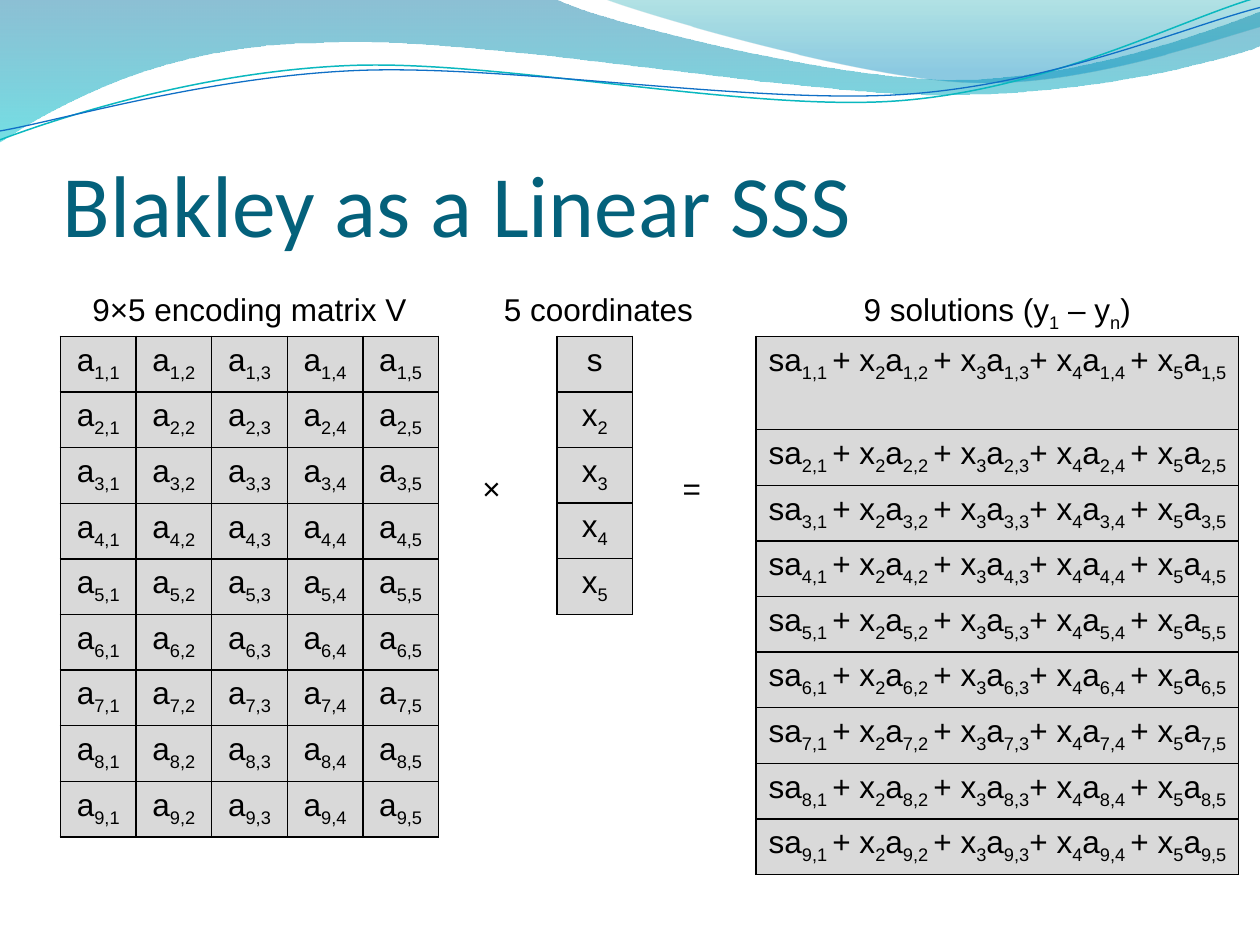
from math import cos, radians, sin

from lxml.etree import SubElement
from pptx import Presentation
from pptx.dml.color import RGBColor
from pptx.enum.text import MSO_ANCHOR, MSO_AUTO_SIZE, PP_ALIGN
from pptx.oxml.ns import qn
from pptx.util import Inches, Pt

rgb = RGBColor.from_string
BLACK, GREY, TEAL = "000000", "D9D9D9", "04617B"


def write(frame, text, align=PP_ALIGN.CENTER, name="Arial", size=18, color=BLACK):
    """Fill a text frame; parts between underscores become subscripts."""
    para = frame.paragraphs[0]
    para.alignment = align
    for i, part in enumerate(text.split("_")):
        if not part:
            continue
        run = para.add_run()
        run.text = part
        for key, value in {"name": name, "size": Pt(size)}.items():
            setattr(run.font, key, value)
        run.font.color.rgb = rgb(color)
        if i % 2:
            run.font._element.set("baseline", "-25000")


def draw(steps, closed, turn=0, center=(0, 0)):
    """Draw a freeform from steps of one point (line) or three (curve)."""
    cx, cy = center
    c, s = cos(radians(turn)), sin(radians(turn))
    # Points are given as seen, so take the shape's own rotation out first.
    points = [(Inches(cx + (x - cx) * c + (y - cy) * s),
               Inches(cy - (x - cx) * s + (y - cy) * c))
              for step in steps for x, y in step]
    pen = shapes.build_freeform(*points[0], scale=1.0)
    pen.add_line_segments(points[1:], close=closed)
    shape = pen.convert_to_shape()
    shape.shadow.inherit = False
    shape.rotation = turn % 360
    outline = next(shape._element.iter(qn("a:path")))
    lines = iter(outline.findall(qn("a:lnTo")))
    for step in steps[1:]:
        first = next(lines)
        if len(step) == 3:
            first.tag = qn("a:cubicBezTo")
            for _ in range(2):
                extra = next(lines)
                first.append(extra[0])
                outline.remove(extra)
    return shape


deck = Presentation()
deck.slide_width, deck.slide_height = Inches(10), Inches(7.5)
slide = deck.slides.add_slide(deck.slide_layouts[6])
shapes = slide.shapes

# Header waves: steps, then (position, colour, opacity) for each stop
waves = [
    ([[(0, -0.01)], [(4.4, -0.01)],
      [(4.76, 0.17), (6.64, 0.63), (7.58, 0.63)],
      [(8.53, 0.63), (9.58, 0.26), (10, 0.09)],
      [(10.01, 0.36)],
      [(9.83, 0.44), (8.7, 0.76), (7.46, 0.75)],
      [(6.22, 0.75), (3.82, 0.28), (2.57, 0.34)],
      [(1.29, 0.35), (0.46, 0.83), (-0.01, 1.13)]],
     [(0, "0074A1", 45), (1, "00C6CF", 55)]),
    ([[(4.79, -0.01)],
      [(5.09, 0.11), (6.82, 0.62), (7.69, 0.65)],
      [(8.56, 0.69), (9.61, 0.32), (10, 0.21)],
      [(10, 0)]],
     [(0, "00A1A9", 30), (0.8, "008BBF", 45)]),
]
for steps, stops in waves:
    wave = draw(steps, True)
    wave.line.fill.background()
    wave.fill.gradient()
    wave.fill.gradient_angle = 270
    for stop, (place, color, _) in zip(wave.fill.gradient_stops, stops):
        stop.position = place
        stop.color.rgb = rgb(color)
    tints = wave._element.spPr.iter(qn("a:srgbClr"))
    for tint, (_, _, alpha) in zip(tints, stops):
        SubElement(tint, qn("a:alpha"), val=str(alpha * 1000))

curves = [
    ([[(0, 1.11)],
      [(0.48, 0.93), (1.58, 0.57), (2.77, 0.52)],
      [(3.95, 0.47), (5.93, 0.89), (7.13, 0.8)],
      [(8.33, 0.71), (9.38, 0.15), (9.98, -0.02)]],
     (4.99, 0.57), "0AB8BF", 0.85),
    ([[(0, 1.04)],
      [(0.47, 0.96), (1.64, 0.61), (2.83, 0.56)],
      [(4.03, 0.51), (5.97, 0.83), (7.17, 0.75)],
      [(8.36, 0.67), (9.41, 0.21), (10, 0.06)]],
     (5, 0.59), "0F6FC6", 0.75),
]
for steps, center, color, width in curves:
    curve = draw(steps, False, -2.7, center)
    curve.fill.background()
    curve.line.color.rgb = rgb(color)
    curve.line.width = Pt(width)

# Title
title = shapes.add_textbox(Inches(0.5), Inches(0.77), Inches(9), Inches(1.25))
style = {"word_wrap": True, "vertical_anchor": MSO_ANCHOR.BOTTOM,
         "margin_left": 0, "margin_top": Inches(0.05),
         "margin_right": 0, "margin_bottom": 0}
for key, value in style.items():
    setattr(title.text_frame, key, value)
write(title.text_frame, "Blakley as a Linear SSS", PP_ALIGN.LEFT, "Calibri", 50, TEAL)

# Matrix, coordinates and solutions: left, column width, first row, alignment, cells
rows = range(1, 10)
matrix = [[f"a_{r},{c}_" for c in range(1, 6)] for r in rows]
coords = [["s"]] + [[f"x_{n}_"] for n in range(2, 6)]
sums = [[f"sa_{r},1 _+ x_2_a_{r},2 _+ x_3_a_{r},3_+ x_4_a_{r},4 _+ x_5_a_{r},5_"]
        for r in rows]
tables = [
    (0.48, 0.6, 0.44, PP_ALIGN.CENTER, matrix),
    (6, 3.83, 0.74, PP_ALIGN.LEFT, sums),
    (4.42, 0.6, 0.44, PP_ALIGN.CENTER, coords),
]
for left, width, first, align, cells in tables:
    high, wide = len(cells), len(cells[0])
    table = shapes.add_table(high, wide, Inches(left), Inches(2.67), Inches(width * wide),
                             Inches(first + 0.44 * (high - 1))).table
    table.first_row = table.horz_banding = False
    for col in table.columns:
        col.width = Inches(width)
    for r, texts in enumerate(cells):
        table.rows[r].height = Inches(0.44 if r else first)
        for c, text in enumerate(texts):
            cell = table.cell(r, c)
            cell.margin_right = Inches(0.1 if align == PP_ALIGN.CENTER else 0.05)
            props = cell._tc.get_or_add_tcPr()
            for side in ("lnL", "lnR", "lnT", "lnB"):
                edge = SubElement(props, qn(f"a:{side}"), w=str(Pt(1)))
                SubElement(SubElement(edge, qn("a:solidFill")), qn("a:srgbClr"), val=BLACK)
            cell.fill.solid()
            cell.fill.fore_color.rgb = rgb(GREY)
            write(cell.text_frame, text, align)

# Headings and operators
labels = [
    (0.48, 2.25, 3, "9×5 encoding matrix V"),
    (3.75, 2.25, 2, "5 coordinates"),
    (6, 2.25, 3.83, "9 solutions (y_1_ – y_n_)"),
    (3.73, 3.67, 0.35, "×"),
    (5.32, 3.67, 0.35, "="),
]
for left, top, width, text in labels:
    box = shapes.add_textbox(Inches(left), Inches(top), Inches(width), Inches(0.4))
    box.text_frame.word_wrap = len(text) > 1
    box.text_frame.auto_size = MSO_AUTO_SIZE.SHAPE_TO_FIT_TEXT
    write(box.text_frame, text, PP_ALIGN.CENTER if len(text) > 1 else PP_ALIGN.LEFT)

deck.save("out.pptx")
